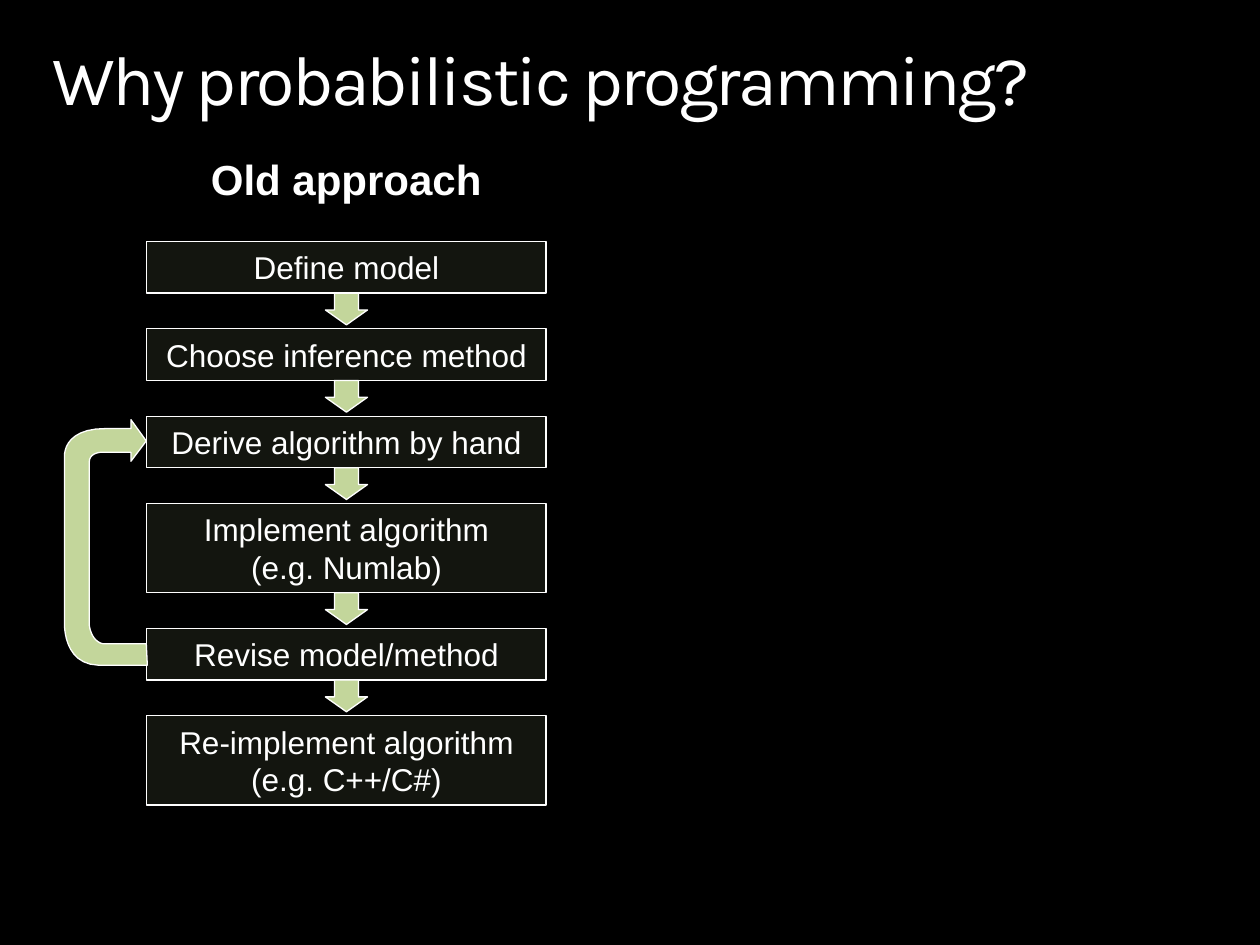
from dataclasses import dataclass

from lxml import etree
from pptx import Presentation
from pptx import util as u
from pptx.dml.color import RGBColor
from pptx.enum import shapes, text
from pptx.oxml.ns import qn
from pptx.shapes.autoshape import Shape
from pptx.slide import Slide

COLORS = {"background": "000000", "text": "FFFFFF", "line": "FFFFFF", "accent": "C3D69B"}

Point = tuple[float, float]

BOX_LEFT, BOX_WIDTH = 2.96, 8.05
FIRST_TOP, GAP = 4.87, 0.72
SINGLE, DOUBLE = 1.04, 1.8
ARROW_WIDTH, ARROW_HEIGHT = 0.85, 0.64
CURVE_STEPS = 12
HARD_SPACE = chr(160)


@dataclass
class Step:
    label: str
    height: float = SINGLE


@dataclass
class Curve:
    start: Point
    first_control: Point
    second_control: Point
    end: Point

    def points(self) -> list[Point]:
        corners = (self.start, self.first_control, self.second_control, self.end)
        result = []
        for index in range(CURVE_STEPS + 1):
            t = index / CURVE_STEPS
            weights = ((1 - t) ** 3, 3 * t * (1 - t) ** 2, 3 * t**2 * (1 - t), t**3)
            x, y = (sum(w * c[axis] for w, c in zip(weights, corners)) for axis in (0, 1))
            result.append((x, y))
        return result


STEPS = [
    Step("Define model"),
    Step("Choose inference method"),
    Step("Derive algorithm by hand"),
    Step(f"Implement algorithm (e.g.{HARD_SPACE}Numlab)", DOUBLE),
    Step("Revise model/method"),
    Step(f"Re-implement algorithm (e.g.{HARD_SPACE}C++/C#)", DOUBLE),
]

LOOP_OUTLINE = [
    (2.95, 12.98),
    *Curve((2.08, 12.98), (1.83, 12.93), (1.8, 12.6), (1.8, 12.6)).points(),
    *Curve((1.8, 9.32), (1.8, 9.07), (2.16, 9.12), (2.16, 9.12)).points(),
    (2.64, 9.12),
    (2.64, 9.3),
    (2.95, 8.89),
    (2.64, 8.46),
    (2.64, 8.64),
    *Curve((2.13, 8.64), (1.24, 8.64), (1.3, 9.22), (1.3, 9.22)).points(),
    *Curve((1.3, 12.57), (1.3, 12.57), (1.27, 13.39), (1.98, 13.41)).points(),
    (2.97, 13.41),
]


def color(name: str) -> RGBColor:
    return RGBColor.from_string(COLORS[name])


def style_shape(shape: Shape) -> None:
    shape.shadow.inherit = False
    shape.fill.solid()
    shape.fill.fore_color.rgb = color("accent")
    shape.line.color.rgb = color("line")
    shape.line.width = u.Pt(0.75)


def write_text(shape: Shape, words: str, size: float, font: str = "Arial", bold: bool = False) -> None:
    shape.text_frame.text = words
    paragraph = shape.text_frame.paragraphs[0]
    paragraph.alignment = text.PP_ALIGN.CENTER
    paragraph.font.name = font
    paragraph.font.size = u.Pt(size)
    paragraph.font.bold = bold
    paragraph.font.color.rgb = color("text")


def draw_title(slide: Slide) -> None:
    title = slide.shapes.title
    title.left, title.top, title.width, title.height = map(u.Cm, (1.06, 0.89, 23.29, 1.55))
    write_text(title, "Why probabilistic programming?", 40, "Karla")
    frame = title.text_frame
    frame.margin_left = frame.margin_top = frame.margin_right = frame.margin_bottom = 0
    frame.auto_size = text.MSO_AUTO_SIZE.SHAPE_TO_FIT_TEXT
    paragraph = frame.paragraphs[0]
    paragraph.alignment = text.PP_ALIGN.LEFT
    paragraph.line_spacing = 0.9
    paragraph.runs[0].font._element.set("spc", "-150")


def draw_heading(slide: Slide) -> None:
    heading = slide.shapes.add_textbox(*map(u.Cm, (3.97, 2.97, 6.02, 1.27)))
    heading.text_frame.word_wrap = False
    write_text(heading, "Old approach", 24, bold=True)


def draw_step(slide: Slide, step: Step, top: float) -> None:
    box = slide.shapes.add_shape(
        shapes.MSO_SHAPE.RECTANGLE, *map(u.Cm, (BOX_LEFT, top, BOX_WIDTH, step.height))
    )
    style_shape(box)
    fill_color = box.fill._xPr.find(qn("a:solidFill"))[0]
    etree.SubElement(fill_color, qn("a:alpha"), val="10000")
    box.text_frame.word_wrap = True
    write_text(box, step.label, 18)


def draw_arrow(slide: Slide, top: float) -> None:
    left = BOX_LEFT + (BOX_WIDTH - ARROW_WIDTH) / 2
    arrow = slide.shapes.add_shape(
        shapes.MSO_SHAPE.DOWN_ARROW, *map(u.Cm, (left, top, ARROW_WIDTH, ARROW_HEIGHT))
    )
    arrow.adjustments[0], arrow.adjustments[1] = 0.57, 0.47
    style_shape(arrow)


def draw_loop(slide: Slide, outline: list[Point]) -> None:
    start, *others = [(u.Cm(x), u.Cm(y)) for x, y in outline]
    builder = slide.shapes.build_freeform(*start)
    builder.add_line_segments(others, close=True)
    style_shape(builder.convert_to_shape())


def main() -> None:
    presentation = Presentation()
    presentation.slide_width, presentation.slide_height = u.Cm(25.4), u.Cm(19.05)
    slide = presentation.slides.add_slide(presentation.slide_layouts[5])
    slide.background.fill.solid()
    slide.background.fill.fore_color.rgb = color("background")

    draw_title(slide)
    draw_heading(slide)
    top = FIRST_TOP
    for step in STEPS:
        draw_step(slide, step, top)
        if step is not STEPS[-1]:
            draw_arrow(slide, top + step.height)
        top += step.height + GAP
    draw_loop(slide, LOOP_OUTLINE)

    presentation.save("out.pptx")


if __name__ == "__main__":
    main()
